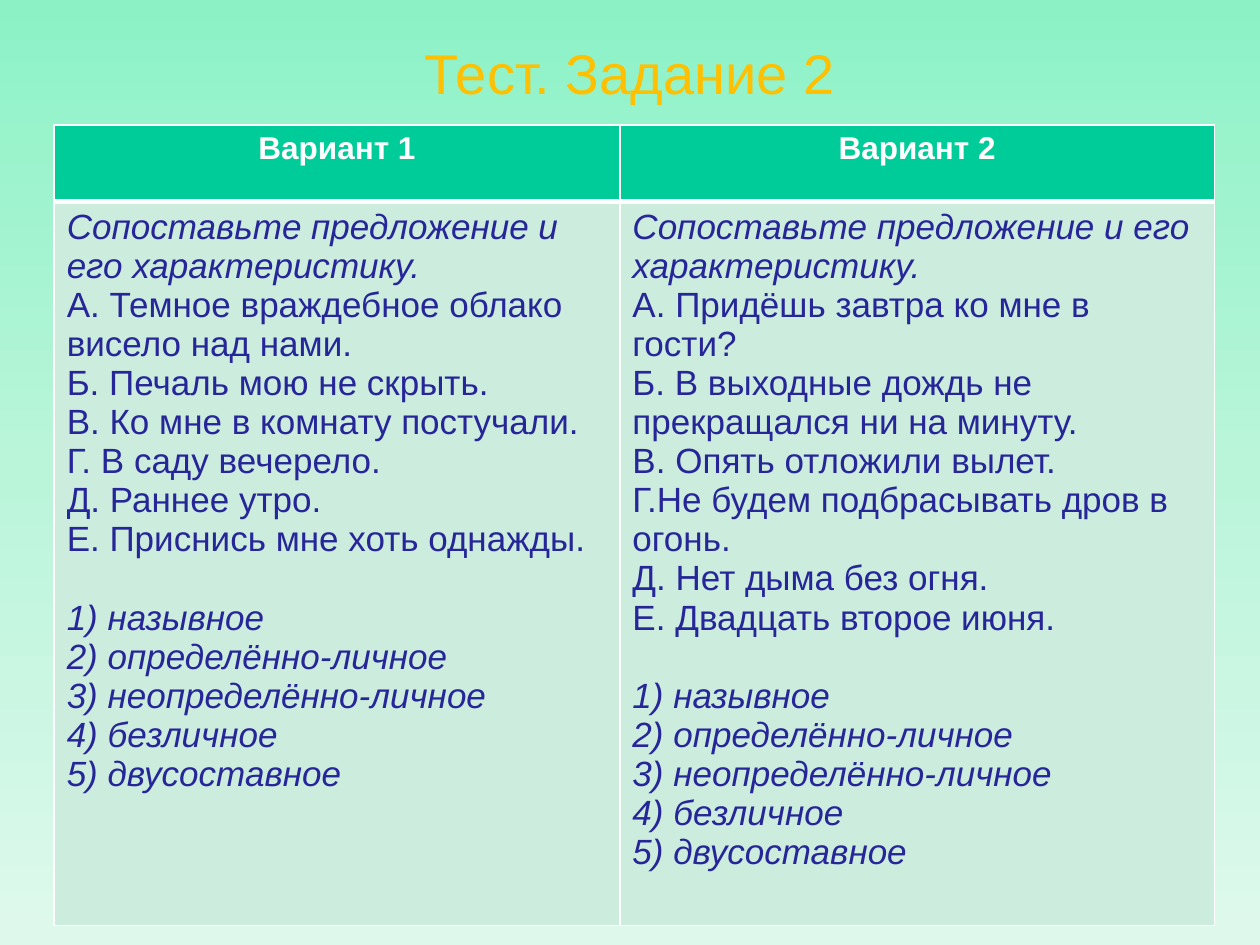
from copy import deepcopy

from lxml import etree
from pptx import Presentation
from pptx.dml.color import RGBColor
from pptx.enum.text import MSO_ANCHOR, PP_ALIGN
from pptx.oxml.ns import qn
from pptx.util import Inches, Pt

CENTER = PP_ALIGN.CENTER
LEFT = PP_ALIGN.LEFT
MIDDLE = MSO_ANCHOR.MIDDLE
FONT = "Arial"
COLORS = {
    "title": "FFC000",
    "header": "00CC99",
    "body": "CCECDE",
    "text": "262699",
    "white": "FFFFFF",
}
GRADIENT = [(0, "8CF2C6"), (0.5, "BAF5DA"), (1, "DEF9EC")]
TASK = "Сопоставьте предложение и его характеристику."
TYPES = ["назывное", "определённо-личное", "неопределённо-личное", "безличное", "двусоставное"]
VARIANTS = {
    "Вариант 1": [
        "А. Темное враждебное облако висело над нами.",
        "Б. Печаль мою не скрыть.",
        "В. Ко мне в комнату постучали.",
        "Г. В саду вечерело.",
        "Д. Раннее утро.",
        "Е. Приснись мне хоть однажды.",
    ],
    "Вариант 2": [
        "А. Придёшь завтра ко мне в гости?",
        "Б. В выходные дождь не прекращался ни на минуту.",
        "В. Опять отложили вылет.",
        "Г.Не будем подбрасывать дров в огонь.",
        "Д. Нет дыма без огня.",
        "Е. Двадцать второе июня.",
    ],
}


def write(paragraph, text, size=20, color="text", bold=False, italic=False, align=LEFT, before=0):
    """Fill a paragraph with one formatted run."""
    paragraph.alignment = align
    paragraph.space_before = Pt(before)
    run = paragraph.add_run()
    run.text = text
    font = run.font
    font.name, font.size, font.bold, font.italic = FONT, Pt(size), bold, italic
    font.color.rgb = RGBColor.from_string(COLORS[color])


def paint_background(slide):
    """Give the slide a vertical gradient of three stops."""
    fill = slide.background.fill
    fill.gradient()
    fill.gradient_angle = 270
    stop_list = next(slide.element.iter(qn("a:gsLst")))
    stop_list.insert(1, deepcopy(stop_list[0]))
    for element, stop, (position, color) in zip(stop_list, fill.gradient_stops, GRADIENT):
        element.set("pos", str(int(position * 100000)))
        stop.color.rgb = RGBColor.from_string(color)


def add_title(slide, left, top, width, height):
    """Place the centred slide title."""
    frame = slide.shapes.add_textbox(left, top, width, height).text_frame
    frame.word_wrap = True
    frame.vertical_anchor = MIDDLE
    write(frame.paragraphs[0], "Тест. Задание 2", size=32, color="title", align=CENTER)


def style_cell(cell, fill, top=1, bottom=1):
    """Set the fill and white borders of a cell."""
    properties = cell._tc.get_or_add_tcPr()
    for side, width in {"L": 1, "R": 1, "T": top, "B": bottom}.items():
        line = etree.SubElement(properties, qn(f"a:ln{side}"), w=str(Pt(width)))
        solid = etree.SubElement(line, qn("a:solidFill"))
        etree.SubElement(solid, qn("a:srgbClr"), val=COLORS["white"])
    cell.fill.solid()
    cell.fill.fore_color.rgb = RGBColor.from_string(COLORS[fill])


def fill_variant(cell, sentences):
    """Write the task, its sentences and the numbered answers."""
    frame = cell.text_frame
    write(frame.paragraphs[0], TASK, italic=True)
    for sentence in sentences:
        write(frame.add_paragraph(), sentence)
    for number, name in enumerate(TYPES, 1):
        gap = 22.3 if number == 1 else 0
        write(frame.add_paragraph(), f"{number}) {name}", italic=True, before=gap)


def add_variants(slide, left, top, width, height):
    """Place the table with one column for each variant."""
    table = slide.shapes.add_table(2, len(VARIANTS), left, top, width, height).table
    table.horz_banding = False
    table.columns[0].width = Inches(4.49)
    table.columns[1].width = width - Inches(4.49)
    table.rows[0].height = Inches(0.61)
    table.rows[1].height = height - Inches(0.61)
    for column, (heading, sentences) in enumerate(VARIANTS.items()):
        header, body = table.cell(0, column), table.cell(1, column)
        style_cell(header, "header", bottom=3)
        style_cell(body, "body", top=3)
        write(header.text_frame.paragraphs[0], heading, size=18, color="white", bold=True, align=CENTER)
        fill_variant(body, sentences)


def main():
    """Build and save the presentation."""
    presentation = Presentation()
    presentation.slide_width, presentation.slide_height = Inches(10), Inches(7.5)
    slide = presentation.slides.add_slide(presentation.slide_layouts[6])
    paint_background(slide)
    add_title(slide, Inches(0.5), Inches(0.3), Inches(9), Inches(0.54))
    add_variants(slide, Inches(0.43), Inches(0.99), Inches(9.21), Inches(6.3))
    presentation.save("out.pptx")


if __name__ == "__main__":
    main()
